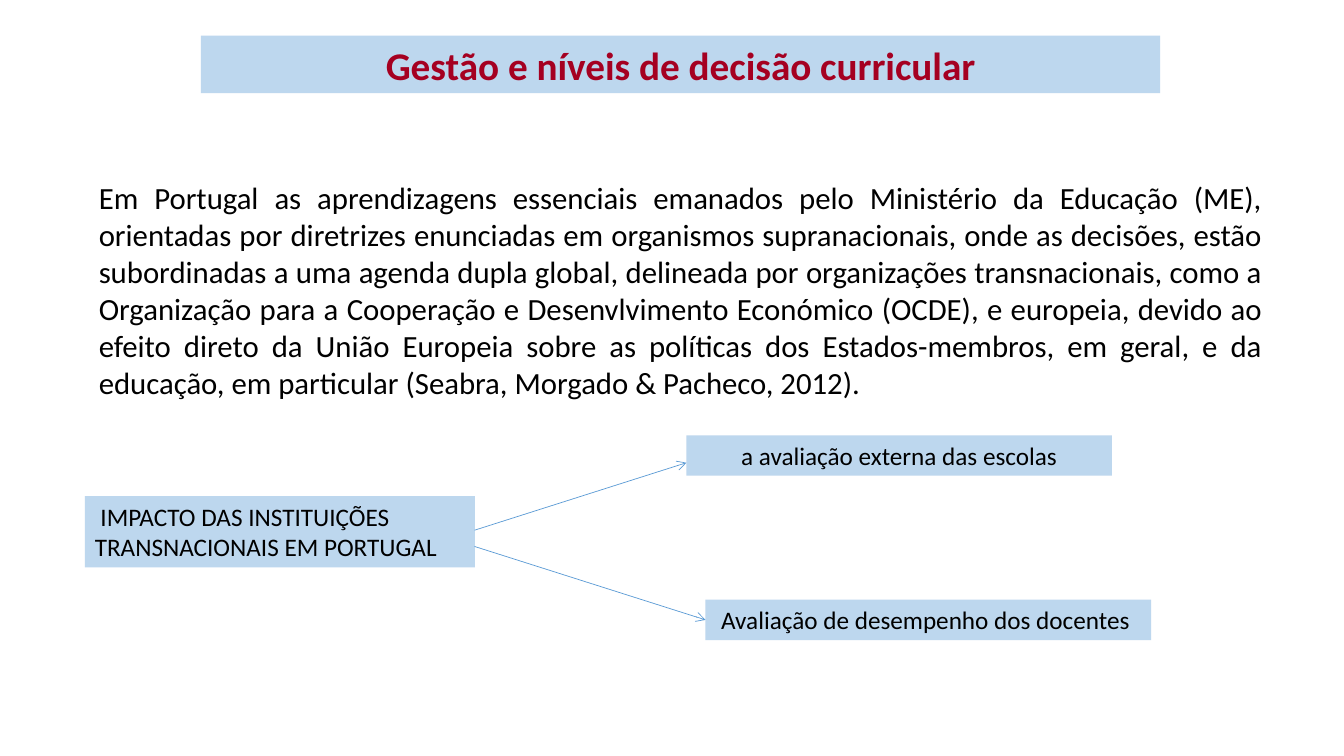
import pptx
import pptx.util
import pptx.dml.color
import pptx.enum.shapes
import pptx.enum.text
import pptx.oxml
import pptx.oxml.ns

Cm = pptx.util.Cm
Align = pptx.enum.text.PP_ALIGN
Anchor = pptx.enum.text.MSO_ANCHOR

COLORS = {"panel": "BDD7EE", "title": "A50021", "text": "000000", "arrow": "5B9BD5"}

TITLE = "Gestão e níveis de decisão curricular"
BODY = (
    "Em Portugal as aprendizagens essenciais emanados pelo Ministério da Educação (ME), "
    "orientadas por diretrizes enunciadas em organismos supranacionais, onde as decisões, "
    "estão subordinadas a uma agenda dupla global, delineada por organizações "
    "transnacionais, como a Organização para a Cooperação e Desenvlvimento Económico "
    "(OCDE), e europeia, devido ao efeito direto da União Europeia sobre as políticas dos "
    "Estados-membros, em geral, e da educação, em particular (Seabra, Morgado & Pacheco, "
    "2012)."
)
IMPACT = " IMPACTO DAS INSTITUIÇÕES TRANSNACIONAIS EM PORTUGAL"
SCHOOLS = "a avaliação externa das escolas"
TEACHERS = " Avaliação de desempenho dos docentes"

FRAME_FORMAT = {
    "word_wrap": True,
    "auto_size": pptx.enum.text.MSO_AUTO_SIZE.NONE,
    "vertical_anchor": Anchor.TOP,
    "margin_left": Cm(0.25),
    "margin_right": Cm(0.25),
    "margin_top": Cm(0.13),
    "margin_bottom": Cm(0.13),
}


def color(name):
    return pptx.dml.color.RGBColor.from_string(COLORS[name])


def apply_format(target, values):
    for name, value in values.items():
        setattr(target, name, value)


def place(shape, box):
    names = ("left", "top", "width", "height")
    apply_format(shape, dict(zip(names, map(Cm, box))))


def fill_panel(shape):
    shape.fill.solid()
    shape.fill.fore_color.rgb = color("panel")
    shape.line.fill.background()


def write_text(shape, text, size, alignment, color_name="text", bold=False):
    apply_format(shape.text_frame, FRAME_FORMAT)
    paragraph = shape.text_frame.paragraphs[0]
    paragraph.alignment = alignment
    run = paragraph.add_run()
    run.text = text
    font_format = {"name": "Calibri", "size": pptx.util.Pt(size), "bold": bold}
    apply_format(run.font, font_format)
    run.font.color.rgb = color(color_name)


def add_title(slide, text, box):
    title = slide.shapes.title
    place(title, box)
    fill_panel(title)
    write_text(title, text, 28, Align.CENTER, "title", True)


def add_body(slide, text, box):
    body = slide.shapes.add_textbox(*map(Cm, box))
    write_text(body, text, 22, Align.JUSTIFY)


def add_panel(slide, text, box, alignment=Align.LEFT):
    panel = slide.shapes.add_shape(
        pptx.enum.shapes.MSO_SHAPE.RECTANGLE, *map(Cm, box)
    )
    panel.shadow.inherit = False
    fill_panel(panel)
    write_text(panel, text, 18, alignment)


def add_arrow(slide, start, end):
    arrow = slide.shapes.add_connector(
        pptx.enum.shapes.MSO_CONNECTOR.STRAIGHT, *map(Cm, start + end)
    )
    arrow.line.color.rgb = color("arrow")
    arrow.line.width = pptx.util.Pt(0.5)
    namespace = pptx.oxml.ns.nsdecls("a")
    properties = arrow.element.spPr
    properties.find(pptx.oxml.ns.qn("a:ln")).append(
        pptx.oxml.parse_xml(f'<a:tailEnd {namespace} type="arrow"/>')
    )
    properties.append(pptx.oxml.parse_xml(f"<a:effectLst {namespace}/>"))


def main():
    presentation = pptx.Presentation()
    apply_format(presentation, {"slide_width": Cm(33.87), "slide_height": Cm(19.05)})
    slide = presentation.slides.add_slide(presentation.slide_layouts[5])

    add_title(slide, TITLE, (5.06, 0.9, 24.18, 1.45))
    add_body(slide, BODY, (2.24, 4.37, 29.82, 5.89))
    add_panel(slide, IMPACT, (2.14, 12.5, 9.83, 1.8))
    add_panel(slide, SCHOOLS, (17.3, 10.97, 10.72, 1.02), Align.CENTER)
    add_panel(slide, TEACHERS, (17.78, 15.11, 11.23, 1.02))
    add_arrow(slide, (11.96, 13.36), (17.3, 11.66))
    add_arrow(slide, (11.96, 13.77), (17.78, 15.62))

    presentation.save("out.pptx")


if __name__ == "__main__":
    main()
